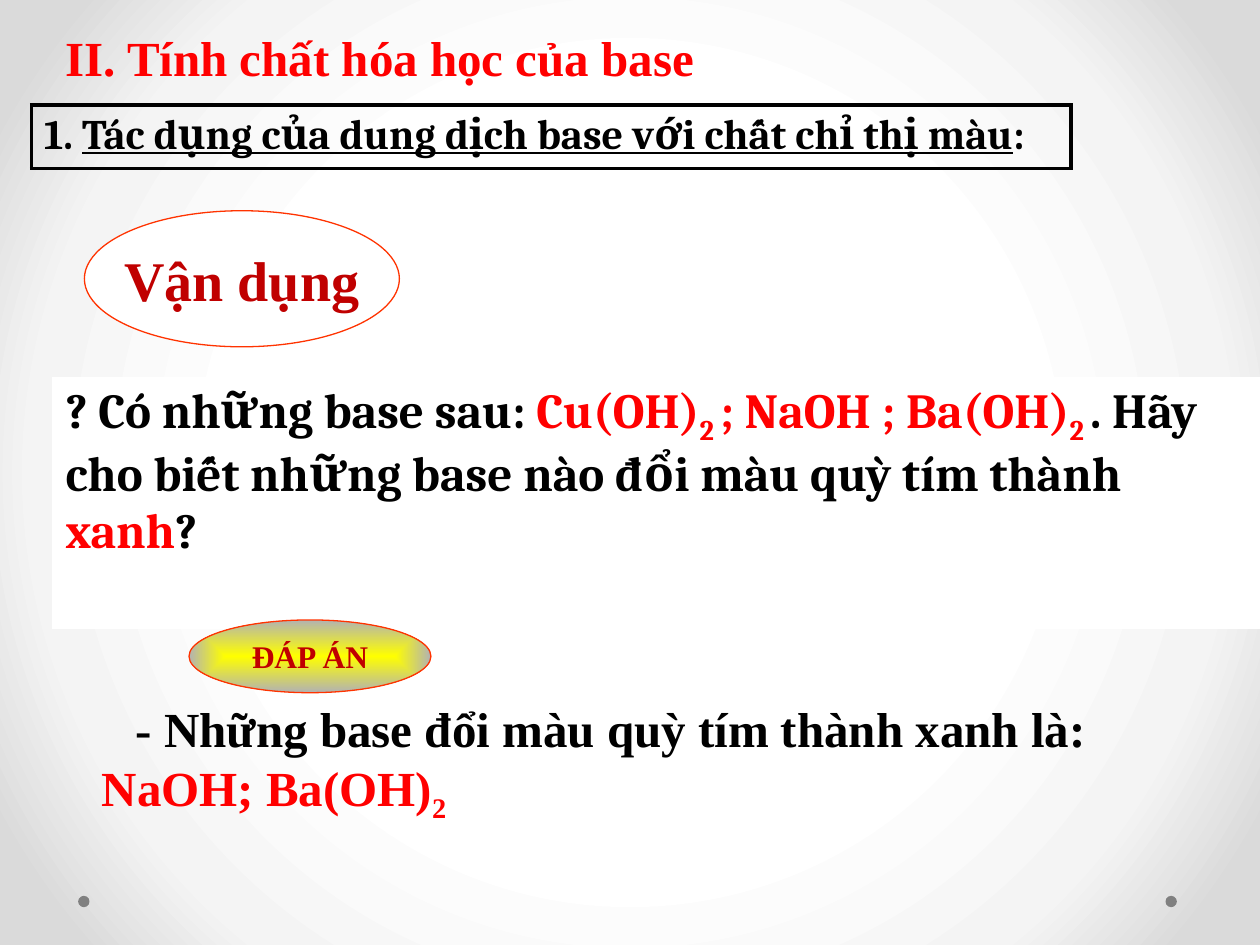
from lxml import etree
from pptx import Presentation, util as u
from pptx.dml.color import RGBColor
from pptx.enum import shapes, text
from pptx.oxml import ns

WIDTH, HEIGHT = 10, 7.5
RED, CRIMSON, ORANGE = "FF0000", "C00000", "FF3300"
BLACK, WHITE = "000000", "FFFFFF"
SERIF, HEADING = "Times New Roman", "Cambria"
SUBSCRIPT = {"baseline": "-25000"}


def colour(hex_code):
    """Turn a hex string into a colour."""
    return RGBColor.from_string(hex_code)


def place(left, top, width, height):
    """Turn shares of the slide's size into lengths."""
    return (u.Inches(left * WIDTH), u.Inches(top * HEIGHT),
            u.Inches(width * WIDTH), u.Inches(height * HEIGHT))


def child(parent, tag, **attributes):
    """Append a drawing element to a parent."""
    return etree.SubElement(parent, ns.qn(f"a:{tag}"), attributes)


def solid(fill, hex_code):
    """Give a fill one colour."""
    fill.solid()
    fill.fore_color.rgb = colour(hex_code)


def radiate(fill, owner, path_kind, stops):
    """Give a fill a gradient that spreads from its centre."""
    fill.gradient()
    gradient = next(owner.iter(ns.qn("a:gradFill")))
    for part in list(gradient):
        gradient.remove(part)
    stop_list = child(gradient, "gsLst")
    for share, hex_code in stops:
        stop = child(stop_list, "gs", pos=str(share * 1000))
        child(stop, "srgbClr", val=hex_code)
    spread = child(gradient, "path", path=path_kind)
    child(spread, "fillToRect", **dict.fromkeys("ltrb", "50000"))


def write(frame, runs, look, layout=None):
    """Write one paragraph of (wording, colour, extras) runs."""
    for name, value in (layout or {}).items():
        setattr(frame, name, value)
    paragraph = frame.paragraphs[0]
    for wording, hex_code, extras in runs:
        run = paragraph.add_run()
        run.text = wording
        for name, value in look.items():
            setattr(run.font, name, value)
        run.font.color.rgb = colour(hex_code)
        for name, value in extras.items():
            run._r.get_or_add_rPr().set(name, value)
    return paragraph


def font(name, points):
    """Describe a bold font."""
    return {"name": name, "size": u.Pt(points), "bold": True}


def add_ellipse(slide, area, fill_colour, outline=None):
    """Add an ellipse with an optional thin outline."""
    ellipse = slide.shapes.add_shape(shapes.MSO_SHAPE.OVAL, *place(*area))
    ellipse.shadow.inherit = False
    solid(ellipse.fill, fill_colour)
    if outline:
        ellipse.line.color.rgb = colour(outline)
        ellipse.line.width = u.Pt(0.75)
    else:
        ellipse.line.fill.background()
    return ellipse


def add_label(slide, area, wording, points):
    """Add an ellipse that carries a centred label."""
    label = add_ellipse(slide, area, WHITE, ORANGE)
    paragraph = write(label.text_frame, [(wording, CRIMSON, {})], font(SERIF, points),
                      {"word_wrap": False, "vertical_anchor": text.MSO_ANCHOR.MIDDLE})
    paragraph.alignment = text.PP_ALIGN.CENTER
    return label


def add_text(slide, area, runs, layout):
    """Add a text box with one paragraph."""
    box = slide.shapes.add_textbox(*place(*area))
    return write(box.text_frame, runs, font(SERIF, 28), layout)


def add_panel(slide, area, runs, points, borders, fill_colour=None):
    """Add a one-cell table with (side, colour, points) borders."""
    table = slide.shapes.add_table(1, 1, *place(*area)).table
    table.first_row = table.horz_banding = False
    cell = table.cell(0, 0)
    properties = cell._tc.get_or_add_tcPr()
    for side, hex_code, thickness in borders:
        border = child(properties, f"ln{side}", w=str(u.Pt(thickness)))
        child(child(border, "solidFill"), "srgbClr", val=hex_code)
    if fill_colour:
        solid(cell.fill, fill_colour)
    else:
        cell.fill.background()
    write(cell.text_frame, runs, font(HEADING, points))


def main():
    """Build the slide and save it."""
    deck = Presentation()
    deck.slide_width, deck.slide_height = u.Inches(WIDTH), u.Inches(HEIGHT)
    slide = deck.slides.add_slide(deck.slide_layouts[6])
    radiate(slide.background.fill, slide.element, "circle",
            [(50, WHITE), (76, "F4F4F4"), (92, "DADADA")])

    for dot_left in (0.925, 0.062):
        add_ellipse(slide, (dot_left, 0.948, 0.009, 0.012), "808080")

    question = [("? Có những base sau: ", BLACK, {}),
                ("Cu(OH)", RED, {}), ("2 ", RED, SUBSCRIPT),
                ("; NaOH ; Ba(OH)", RED, {}), ("2 ", RED, SUBSCRIPT),
                (". Hãy cho biết những base nào đổi màu quỳ tím thành ", BLACK, {}),
                ("xanh", RED, {}), ("?", BLACK, {})]
    add_panel(slide, (0.042, 0.4, 0.958, 0.263), question, 28,
              [("L", WHITE, 1), ("R", WHITE, 1), ("T", WHITE, 1), ("B", WHITE, 3)], WHITE)

    answer = add_text(slide, (0.071, 0.623, 0.85, 0.256),
                      [("- Những base đổi màu quỳ tím thành xanh là: ", BLACK, {}),
                       ("NaOH; Ba(OH)", RED, {}), ("2", RED, SUBSCRIPT)],
                      {"word_wrap": True, "vertical_anchor": text.MSO_ANCHOR.BOTTOM})
    answer._p.get_or_add_pPr().set("indent", str(u.Inches(0.27)))

    button = add_label(slide, (0.15, 0.656, 0.192, 0.077), "ĐÁP ÁN", 18)
    radiate(button.fill, button.element, "shape", [(0, "FFFF00"), (100, "B2B2B2")])
    add_label(slide, (0.067, 0.223, 0.25, 0.144), "Vận dụng", 32)

    topic = [("1. ", BLACK, {}),
             ("Tác dụng của dung dịch base với chất chỉ thị màu", BLACK, {"u": "sng"}),
             (":", BLACK, {})]
    add_panel(slide, (0.025, 0.111, 0.825, 0.067), topic, 24,
              [(side, BLACK, 2.25) for side in "LRTB"])

    add_text(slide, (0.042, 0.023, 0.525, 0.076),
             [("II. Tính chất hóa học của base", RED, {})], {"word_wrap": False})
    deck.save("out.pptx")


if __name__ == "__main__":
    main()
